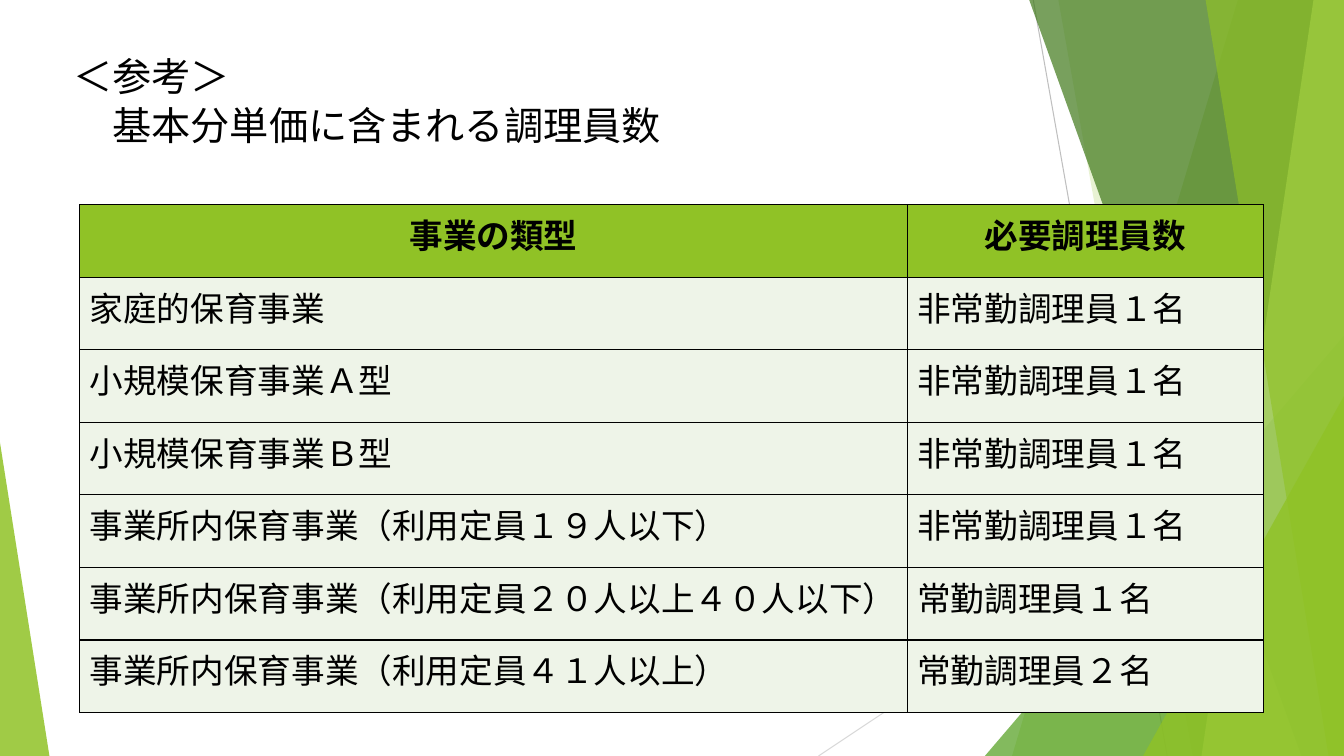
from lxml.etree import SubElement
from pptx import Presentation
from pptx.dml.color import RGBColor
from pptx.enum.shapes import MSO_CONNECTOR, MSO_SHAPE
from pptx.enum.text import MSO_ANCHOR, PP_ALIGN
from pptx.oxml.ns import qn
from pptx.util import Inches, Pt

LIME = RGBColor(0x90, 0xC2, 0x26)
GREEN = RGBColor(0x54, 0xA0, 0x21)
FOREST = RGBColor(0x3F, 0x78, 0x19)
PALE = RGBColor(0xC0, 0xE4, 0x74)
MIST = RGBColor(0xEE, 0xF4, 0xE8)
GRAY = RGBColor(0xBF, 0xBF, 0xBF)
SILVER = RGBColor(0xD9, 0xD9, 0xD9)
BLACK = RGBColor(0, 0, 0)

LATIN = "Karla"
ASIAN = "Noto Sans CJK JP"

PART_TIME = "非常勤調理員１名"
ROWS = [
    ("事業の類型", "必要調理員数"),
    ("家庭的保育事業", PART_TIME),
    ("小規模保育事業Ａ型", PART_TIME),
    ("小規模保育事業Ｂ型", PART_TIME),
    ("事業所内保育事業（利用定員１９人以下）", PART_TIME),
    ("事業所内保育事業（利用定員２０人以上４０人以下）", "常勤調理員１名"),
    ("事業所内保育事業（利用定員４１人以上）", "常勤調理員２名"),
]


def write(para, text, size=24, font=LATIN, color=BLACK, bold=False,
          align=PP_ALIGN.LEFT):
    para.alignment = align
    for i, line in enumerate(text.split("\n")):
        if i:
            para.add_line_break()
        run = para.add_run()
        run.text = line
        run.font.size = Pt(size)
        run.font.name = font
        run.font.bold = bold
        run.font.color.rgb = color
        SubElement(run.font._element, qn("a:ea"), typeface=ASIAN)


def edge(cell, color=BLACK, width=1):
    """Draw a line on all four sides of a cell."""
    props = cell._tc.get_or_add_tcPr()
    for side in "LRTB":
        line = SubElement(props, qn(f"a:ln{side}"), w=str(Pt(width)))
        fill = SubElement(line, qn("a:solidFill"))
        SubElement(fill, qn("a:srgbClr"), val=str(color))


class Board:
    """Current slide; all lengths are percent of its width or height."""

    def __init__(self, deck):
        self.wide, self.high = deck.slide_width, deck.slide_height
        self.shapes = deck.slides.add_slide(deck.slide_layouts[6]).shapes

    def x(self, share):
        return round(self.wide * share / 100)

    def y(self, share):
        return round(self.high * share / 100)

    def box(self, left, top, width, height):
        return self.x(left), self.y(top), self.x(width), self.y(height)

    def paint(self, shape, color, alpha):
        shape.shadow.inherit = False
        shape.line.fill.background()
        shape.fill.solid()
        shape.fill.fore_color.rgb = color
        tone = shape._element.spPr.find(".//" + qn("a:srgbClr"))
        SubElement(tone, qn("a:alpha"), val=str(alpha * 1000))

    def line(self, x1, y1, x2, y2, color):
        rule = self.shapes.add_connector(
            MSO_CONNECTOR.STRAIGHT,
            self.x(x1), self.y(y1), self.x(x2), self.y(y2))
        rule.line.color.rgb = color
        rule.line.width = Pt(0.75)
        SubElement(rule._element.spPr, qn("a:effectLst"))

    def band(self, top, foot, color, alpha):
        """Fill from a slanted edge to the right side of the slide."""
        pen = self.shapes.build_freeform(self.x(top), 0)
        pen.add_line_segments([(self.wide, 0), (self.wide, self.high),
                               (self.x(foot), self.high)], close=True)
        self.paint(pen.convert_to_shape(), color, alpha)

    def wedge(self, left, top, width, peak, color, alpha):
        """Stand a triangle on the bottom edge; peak 0 is left, 1 right."""
        shape = self.shapes.add_shape(
            MSO_SHAPE.ISOSCELES_TRIANGLE,
            *self.box(left, top, width, 100 - top))
        shape.adjustments[0] = peak
        self.paint(shape, color, alpha)

    def title(self, text, left, top, width, height):
        frame = self.shapes.add_textbox(
            *self.box(left, top, width, height)).text_frame
        frame.word_wrap = True
        frame.vertical_anchor = MSO_ANCHOR.MIDDLE
        para = frame.paragraphs[0]
        para.line_spacing = Pt(35)
        props = para._p.get_or_add_pPr()
        props.set("marL", str(Pt(56)))
        props.set("indent", str(-Pt(28)))
        write(para, text, size=28, font=ASIAN)

    def table(self, rows, left, top, cols, step):
        grid = self.shapes.add_table(
            len(rows), len(cols),
            *self.box(left, top, sum(cols), step * len(rows))).table
        for col, width in zip(grid.columns, cols):
            col.width = self.x(width)
        for r, row in enumerate(rows):
            grid.rows[r].height = self.y(step)
            head = r == 0
            for c, text in enumerate(row):
                cell = grid.cell(r, c)
                edge(cell)
                cell.fill.solid()
                cell.fill.fore_color.rgb = LIME if head else MIST
                write(cell.text_frame.paragraphs[0], text, bold=head,
                      align=PP_ALIGN.CENTER if head else PP_ALIGN.LEFT)


def main():
    deck = Presentation()
    deck.slide_width, deck.slide_height = Inches(13.33), Inches(7.5)
    board = Board(deck)

    board.line(76.88, 0, 86.85, 100, GRAY)
    board.line(100, 53.73, 60.9, 100, SILVER)
    board.band(92.1, 75.3, LIME, 30)
    board.band(78.75, 88.73, LIME, 20)
    board.wedge(73.28, 44.4, 26.72, 1, GREEN, 72)
    board.band(76.58, 96.83, FOREST, 70)
    board.band(97.73, 89.4, PALE, 70)
    board.band(89.7, 98.85, LIME, 65)
    board.wedge(85.05, 52.4, 14.95, 1, LIME, 80)
    board.wedge(0, 58.53, 3.68, 0, LIME, 85)

    board.table(ROWS, 5.93, 27.07, (61.58, 26.48), 9.6)
    board.title("＜参考＞\n基本分単価に含まれる調理員数", 1.8, 5.73, 68.93, 14.8)
    deck.save("out.pptx")


if __name__ == "__main__":
    main()
